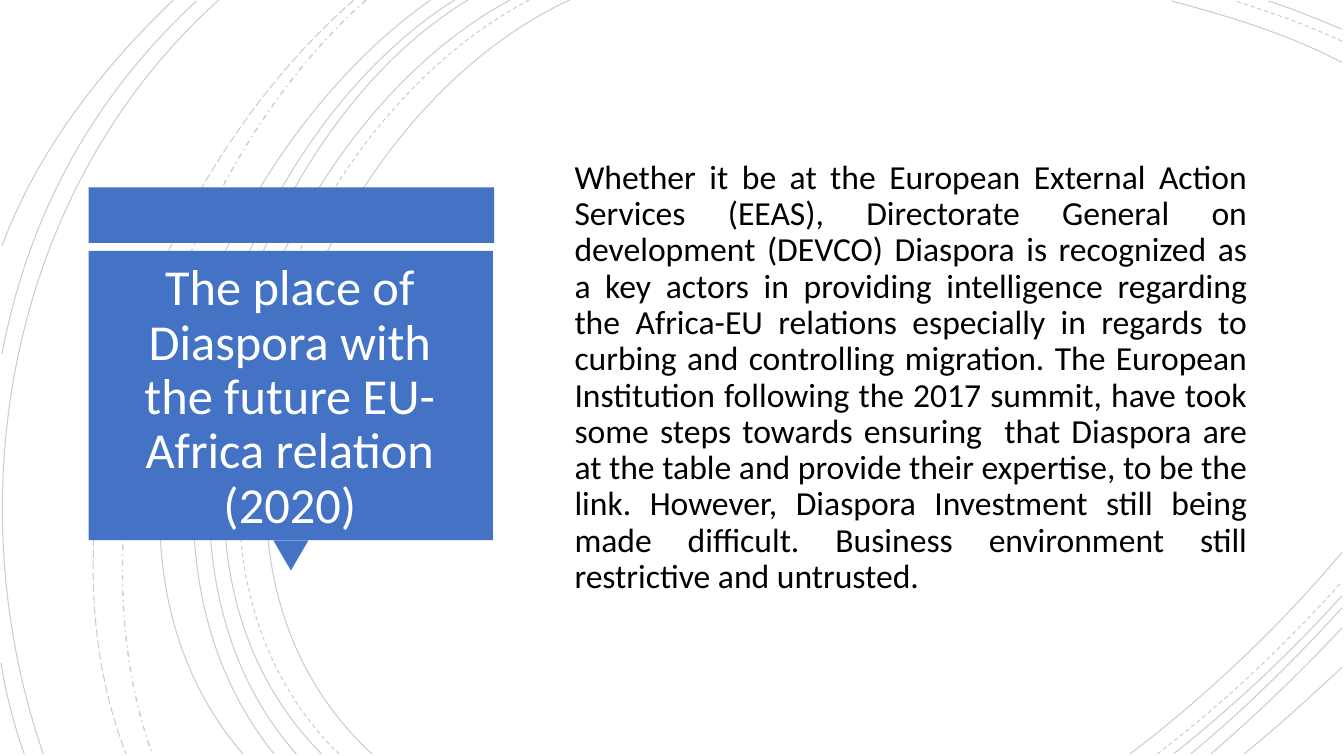
from dataclasses import dataclass
from typing import Any

from lxml import etree
from pptx import Presentation
from pptx.dml.color import RGBColor
from pptx.enum.dml import MSO_LINE
from pptx.enum.shapes import MSO_SHAPE
from pptx.enum.text import MSO_ANCHOR, PP_ALIGN
from pptx.oxml.ns import qn
from pptx.util import Emu, Inches, Pt

SOLID, DASH = MSO_LINE.SOLID, MSO_LINE.DASH
LONG, DOT = MSO_LINE.LONG_DASH, MSO_LINE.DASH_DOT
RECT, WEDGE = MSO_SHAPE.RECTANGLE, MSO_SHAPE.ISOSCELES_TRIANGLE
MIDDLE = MSO_ANCHOR.MIDDLE
CENTER, JUSTIFY = PP_ALIGN.CENTER, PP_ALIGN.JUSTIFY

WIDTH, HEIGHT = Inches(13.33), Inches(7.5)
COLS, ROWS = 13.33, 7.5
EDGE, BASE = 13.31, 7.48  # where the arcs stop at the right and at the bottom

Point = tuple[float, float]


@dataclass(frozen=True)
class Theme:
    accent: RGBColor = RGBColor(0x44, 0x72, 0xC4)
    ink: RGBColor = RGBColor(0, 0, 0)
    paper: RGBColor = RGBColor(255, 255, 255)
    font: str = "Calibri"
    title: Pt = Pt(36)
    body: Pt = Pt(24)
    hair: float = 0.75
    alpha: int = 20000


@dataclass(frozen=True)
class Box:
    left: float
    top: float
    width: float
    height: float


@dataclass(frozen=True)
class Arc:
    points: tuple[Point, Point, Point, Point]
    dash: Any = SOLID
    weight: float = 0.75


@dataclass(frozen=True)
class Block:
    kind: Any
    box: Box
    turn: int = 0


@dataclass(frozen=True)
class Label:
    text: str
    box: Box
    font: dict[str, Any]
    para: dict[str, Any]


THEME = Theme()


def sweep(top: float, one: Point, two: Point, foot: float,
          dash: Any = SOLID, weight: float = THEME.hair) -> Arc:
    """Arc over the full height of the slide."""
    return Arc(((top, 0), one, two, (foot, BASE)), dash, weight)


def crest(right: float, one: Point, two: Point, left: float, dash: Any = SOLID) -> Arc:
    """Arc that cuts the top right corner."""
    return Arc(((EDGE, right), one, two, (left, 0.01)), dash)


def heel(left: float, one: Point, two: Point, right: float, dash: Any = SOLID) -> Arc:
    """Arc that cuts the bottom right corner."""
    return Arc(((left, BASE), one, two, (EDGE, right)), dash)


ARCS = [
    sweep(5.65, (3.15, 1.15), (1.43, 5.4), 3.69),
    sweep(5.25, (2.85, 1.25), (1.23, 5.37), 3.36, DASH),
    sweep(5.06, (2.7, 1.27), (1.1, 5.37), 3.19),
    sweep(4.64, (2.44, 1.33), (1.1, 5.41), 2.94),
    sweep(4.51, (2.31, 1.38), (0.97, 5.33), 2.72),
    sweep(4.27, (2.17, 1.47), (0.53, 5.29), 2.41),
    sweep(3.63, (1.76, 1.66), (0.65, 5.09), 1.51, DOT, 1),
    sweep(3.51, (1.57, 1.69), (0.29, 4.99), 1.25, LONG),
    sweep(2.17, (0.11, 1.85), (-0.46, 4.9), 0.43),
    crest(0.62, (12.78, 0.34), (12.18, 0.16), 11.62),
    crest(0.41, (12.97, 0.25), (12.6, 0.12), 12.25, DASH),
    crest(0.29, (13.07, 0.19), (12.83, 0.09), 12.58),
    heel(11.21, (11.97, 6.9), (12.69, 6.22), 5.48),
    heel(11.48, (12.13, 6.98), (12.75, 6.4), 5.77, DASH),
    heel(11.64, (12.23, 7.01), (12.8, 6.48), 5.91),
    heel(11.81, (12.34, 7.04), (12.84, 6.55), 6.03),
    heel(12.01, (12.46, 7.09), (12.9, 6.67), 6.23),
    heel(12.34, (12.67, 7.21), (12.99, 6.92), 6.62),
    Arc(((1.95, 0.01), (0.92, 0.96), (0.28, 2.14), (0.02, 3.51))),
    Arc(((0.01, 6.58), (0.06, 6.89), (0.14, 7.19), (0.24, BASE))),
    Arc(((1.72, 0), (1, 0.69), (0.37, 1.5), (0.02, 2.44))),
]

BLOCKS = [
    Block(RECT, Box(0.88, 1.86, 4.02, 0.55)),
    Block(WEDGE, Box(2.71, 5.36, 0.35, 0.3), 180),
    Block(RECT, Box(0.88, 2.49, 4.01, 2.87)),
]

LABELS = [
    Label(
        "The place of Diaspora with the future EU-Africa relation (2020)",
        Box(0.99, 2.64, 3.77, 2.62),
        {"size": THEME.title, "name": THEME.font},
        {"alignment": CENTER, "line_spacing": 0.9},
    ),
    Label(
        "Whether it be at the European External Action Services (EEAS), "
        "Directorate General on development (DEVCO) Diaspora is recognized as "
        "a key actors in providing intelligence regarding the Africa-EU "
        "relations especially in regards to curbing and controlling migration. "
        "The European Institution following the 2017 summit, have took some "
        "steps towards ensuring  that Diaspora are at the table and provide "
        "their expertise, to be the link. However, Diaspora Investment still "
        "being made difficult. Business environment still restrictive and "
        "untrusted.",
        Box(5.6, 0.88, 6.87, 5.74),
        {"size": THEME.body, "name": THEME.font},
        {"alignment": JUSTIFY, "line_spacing": 0.9, "space_before": Pt(10)},
    ),
]
INKS = [THEME.paper, THEME.ink]


def across(cols: float) -> Emu:
    return Emu(round(WIDTH * cols / COLS))


def down(rows: float) -> Emu:
    return Emu(round(HEIGHT * rows / ROWS))


def place(box: Box) -> tuple[Emu, Emu, Emu, Emu]:
    return across(box.left), down(box.top), across(box.width), down(box.height)


def apply(target: Any, values: dict[str, Any]) -> None:
    for name, value in values.items():
        setattr(target, name, value)


def bend(shape: Any) -> None:
    """Turn the three straight legs of a freeform into one cubic curve."""
    legs = list(shape._element.iter(qn("a:lnTo")))
    curve = etree.Element(qn("a:cubicBezTo"))
    legs[0].addprevious(curve)
    for leg in legs:
        curve.append(leg[0])
        leg.getparent().remove(leg)


def draw_arc(shapes: Any, arc: Arc) -> None:
    start, *rest = [(across(x), down(y)) for x, y in arc.points]
    pen = shapes.build_freeform(*start)
    pen.add_line_segments(rest, close=False)
    shape = pen.convert_to_shape()
    bend(shape)
    shape.shadow.inherit = False
    shape.fill.background()
    shape.line.color.rgb = THEME.ink
    apply(shape.line, {"width": Pt(arc.weight), "dash_style": arc.dash})
    for color in shape.line._ln.iter(qn("a:srgbClr")):
        etree.SubElement(color, qn("a:alpha"), val=str(THEME.alpha))


def draw_block(shapes: Any, block: Block) -> None:
    shape = shapes.add_shape(block.kind, *place(block.box))
    shape.rotation = block.turn
    shape.shadow.inherit = False
    shape.fill.solid()
    shape.fill.fore_color.rgb = THEME.accent
    shape.line.fill.background()


def draw_label(shapes: Any, label: Label, ink: RGBColor) -> None:
    frame = shapes.add_textbox(*place(label.box)).text_frame
    apply(frame, {"word_wrap": True, "vertical_anchor": MIDDLE})
    para = frame.paragraphs[0]
    apply(para, label.para)
    run = para.add_run()
    run.text = label.text
    apply(run.font, label.font)
    run.font.color.rgb = ink


def main() -> None:
    deck = Presentation()
    apply(deck, {"slide_width": WIDTH, "slide_height": HEIGHT})
    shapes = deck.slides.add_slide(deck.slide_layouts[6]).shapes
    for arc in ARCS:
        draw_arc(shapes, arc)
    for block in BLOCKS:
        draw_block(shapes, block)
    for label, ink in zip(LABELS, INKS):
        draw_label(shapes, label, ink)
    deck.save("out.pptx")


if __name__ == "__main__":
    main()
